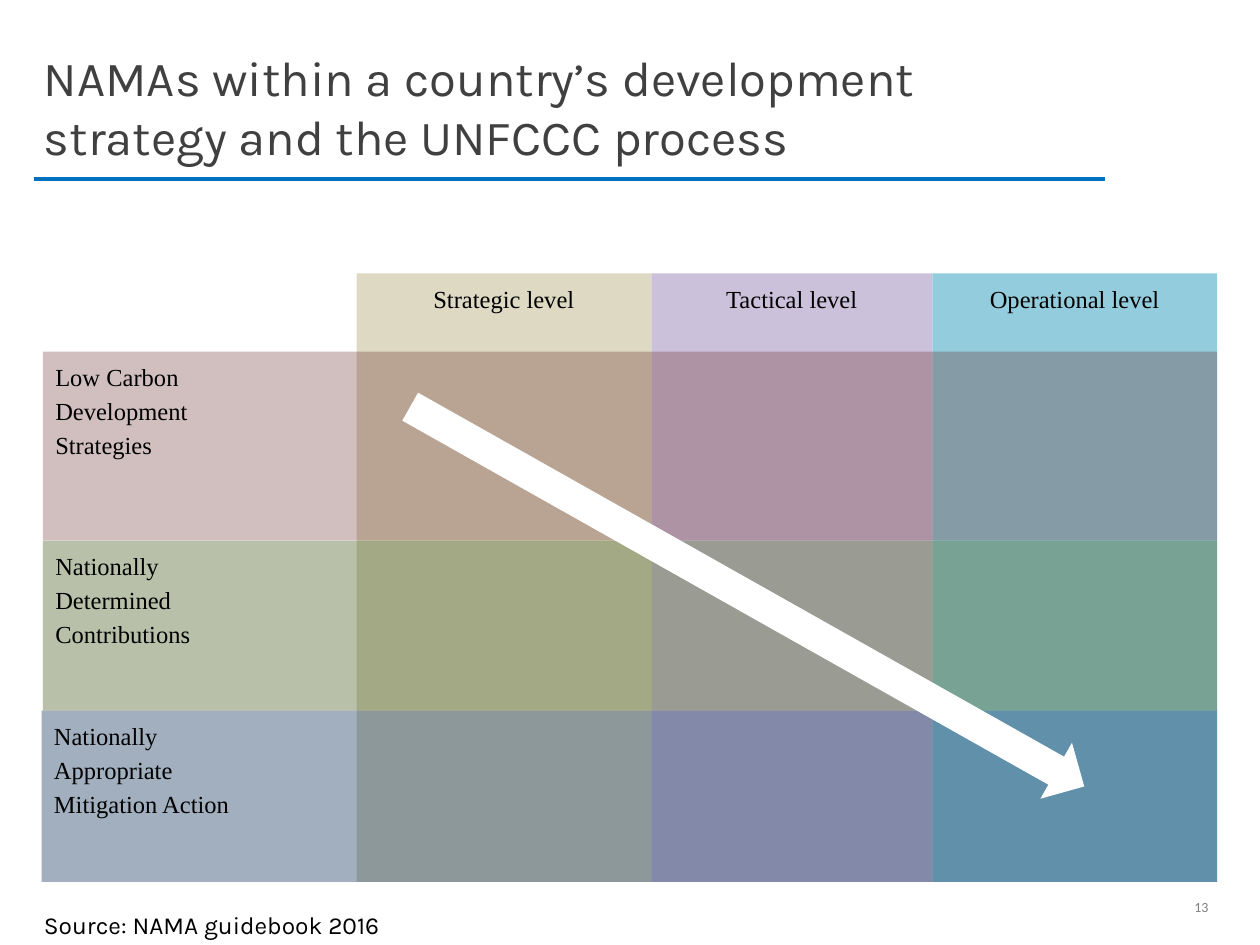
from dataclasses import dataclass

from lxml import etree
from pptx import Presentation
from pptx.dml.color import RGBColor
from pptx.enum import shapes, text
from pptx.oxml import ns
from pptx.util import Inches, Pt

BLACK = RGBColor(0x00, 0x00, 0x00)
WHITE = RGBColor(0xFF, 0xFF, 0xFF)
TITLE_GREY = RGBColor(0x40, 0x40, 0x40)
NUMBER_GREY = RGBColor(0x7F, 0x7F, 0x7F)
RULE_BLUE = RGBColor(0x00, 0x70, 0xC0)
SAND = RGBColor(0xDD, 0xD9, 0xC3)
LILAC = RGBColor(0xCC, 0xC1, 0xDA)
AQUA = RGBColor(0x93, 0xCD, 0xDD)
MAROON = RGBColor(0x63, 0x25, 0x23)
OLIVE = RGBColor(0x4F, 0x62, 0x28)
NAVY = RGBColor(0x17, 0x37, 0x5E)

GRID_TOP, GRID_BOTTOM, GRID_RIGHT = 2.17, 7.0, 9.66


@dataclass
class Level:
    label: str
    left: float
    right: float
    color: RGBColor


@dataclass
class Instrument:
    lines: list[str]
    left: float
    top: float
    bottom: float
    color: RGBColor
    opacity: int


LEVELS = [
    Level("Strategic level", 2.83, 5.17, SAND),
    Level("Tactical level", 5.17, 7.4, LILAC),
    Level("Operational level", 7.4, GRID_RIGHT, AQUA),
]
INSTRUMENTS = [
    Instrument(["Low Carbon", "Development", "Strategies"],
               0.34, 2.79, 4.29, MAROON, 29),
    Instrument(["Nationally", "Determined", "Contributions"],
               0.34, 4.29, 5.64, OLIVE, 40),
    Instrument(["Nationally", "Appropriate", "Mitigation Action"],
               0.33, 5.64, GRID_BOTTOM, NAVY, 40),
]


def write(shape, lines: list[str], *, font="Times New Roman", size=14,
          color=BLACK, align=text.PP_ALIGN.LEFT, spacing=1.0,
          anchor=text.MSO_ANCHOR.TOP) -> None:
    """Fill a shape with one paragraph per line."""
    frame = shape.text_frame
    frame.word_wrap = True
    frame.vertical_anchor = anchor
    for index, line in enumerate(lines):
        paragraph = frame.add_paragraph() if index else frame.paragraphs[0]
        paragraph.alignment = align
        paragraph.line_spacing = spacing
        run = paragraph.add_run()
        run.text = line
        run.font.name = font
        run.font.size = Pt(size)
        run.font.color.rgb = color


def add_text(slide, left: float, top: float, width: float, height: float,
             content: str, **style) -> None:
    box = slide.shapes.add_textbox(Inches(left), Inches(top),
                                   Inches(width), Inches(height))
    write(box, [content], **style)


def add_filled(slide, kind, left: float, top: float, width: float,
               height: float, color: RGBColor, opacity: int = 100):
    shape = slide.shapes.add_shape(kind, Inches(left), Inches(top),
                                   Inches(width), Inches(height))
    shape.shadow.inherit = False
    shape.fill.solid()
    shape.fill.fore_color.rgb = color
    shape.line.fill.background()
    if opacity < 100:
        rgb = shape.fill._xPr.find(".//" + ns.qn("a:srgbClr"))
        etree.SubElement(rgb, ns.qn("a:alpha"), val=str(opacity * 1000))
    return shape


def add_level(slide, level: Level) -> None:
    column = add_filled(slide, shapes.MSO_SHAPE.RECTANGLE, level.left, GRID_TOP,
                        level.right - level.left, GRID_BOTTOM - GRID_TOP,
                        level.color)
    write(column, [level.label], align=text.PP_ALIGN.CENTER, spacing=1.15)


def add_instrument(slide, instrument: Instrument) -> None:
    band = add_filled(slide, shapes.MSO_SHAPE.RECTANGLE,
                      instrument.left, instrument.top,
                      GRID_RIGHT - instrument.left,
                      instrument.bottom - instrument.top,
                      instrument.color, instrument.opacity)
    write(band, instrument.lines, spacing=1.15)


def main() -> None:
    presentation = Presentation()
    presentation.slide_width = Inches(10)
    presentation.slide_height = Inches(7.5)
    slide = presentation.slides.add_slide(presentation.slide_layouts[6])

    # Page number, title and source
    add_text(slide, 9.38, 7.08, 0.42, 0.24, "13", font="Calibri", size=8,
             color=NUMBER_GREY, anchor=text.MSO_ANCHOR.MIDDLE)
    add_text(slide, 0.25, 0.33, 8.61, 1.25,
             "NAMAs within a country’s development strategy and the UNFCCC process",
             font="Karla", size=28, color=TITLE_GREY)
    add_text(slide, 0.25, 7.17, 8.27, 0.34, "Source: NAMA guidebook 2016",
             font="Karla")

    # Rule below the title
    rule = slide.shapes.add_connector(shapes.MSO_CONNECTOR.STRAIGHT, Inches(0.27),
                                      Inches(1.42), Inches(8.77), Inches(1.42))
    rule.line.color.rgb = RULE_BLUE
    rule.line.width = Pt(2)
    etree.SubElement(rule._element.spPr, ns.qn("a:effectLst"))

    # Level columns under translucent instrument bands
    for level in LEVELS:
        add_level(slide, level)
    for instrument in reversed(INSTRUMENTS):
        add_instrument(slide, instrument)

    # Diagonal arrow from strategy to operation
    arrow = add_filled(slide, shapes.MSO_SHAPE.RIGHT_ARROW,
                       2.86, 4.48, 6.14, 0.51, WHITE)
    arrow.rotation = 29.4

    presentation.save("out.pptx")


if __name__ == "__main__":
    main()
